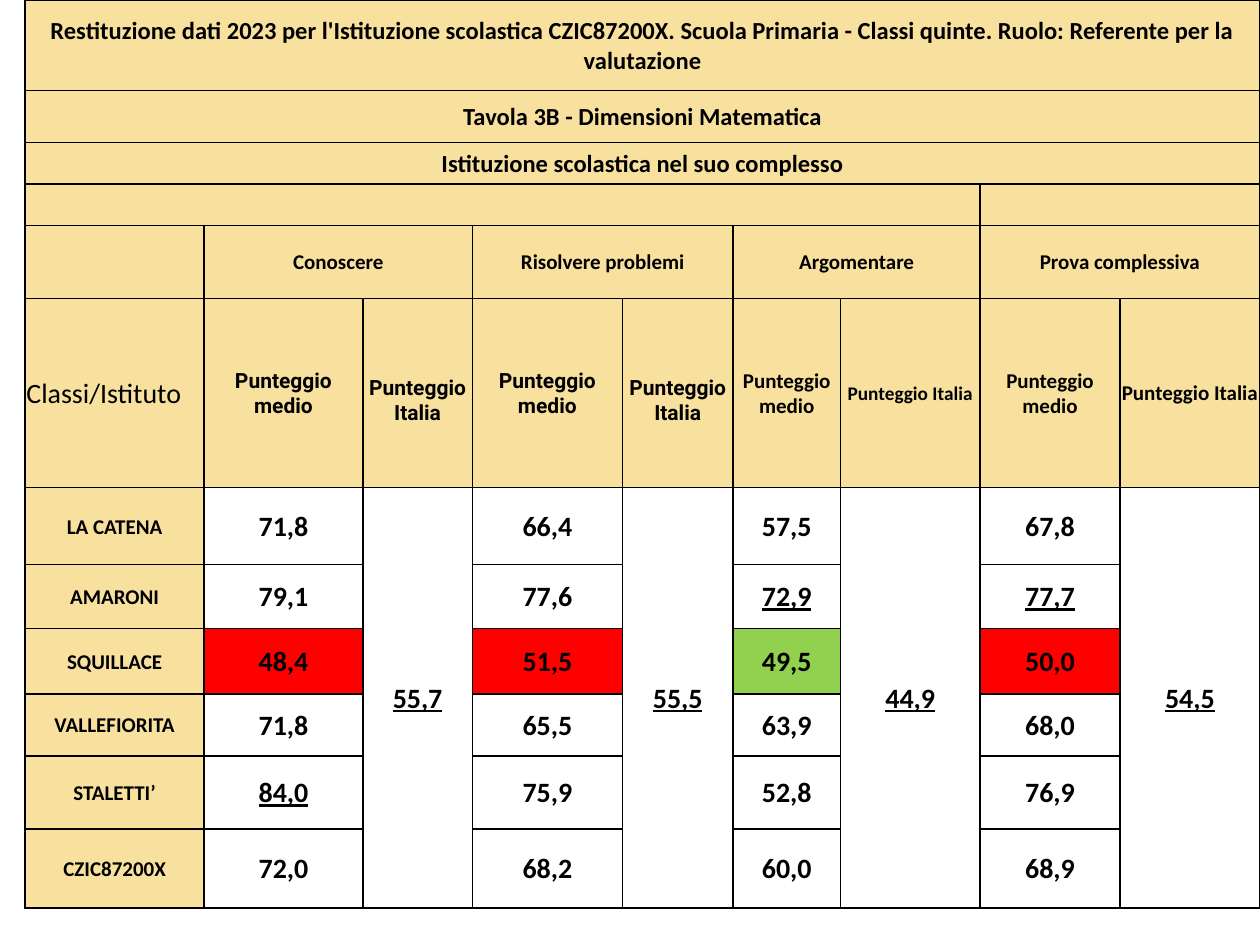
from lxml import etree
from pptx import Presentation
from pptx.dml.color import RGBColor
from pptx.enum import text as t
from pptx.oxml import ns
from pptx.util import Inches, Pt

HUES = {"sand": "F8E19F", "red": "FF0000", "green": "92D050", "ink": "000000"}
WIDTHS = [1.42, 1.26, 0.87, 1.19, 0.88, 0.85, 1.11, 1.11, 1.11]
HEIGHTS = [0.72, 0.41, 0.33, 0.33, 0.58, 1.5, 0.61, 0.51, 0.52, 0.49, 0.58, 0.63]
TITLES = [
    "Restituzione dati 2023 per l'Istituzione scolastica CZIC87200X. "
    "Scuola Primaria - Classi quinte. Ruolo: Referente per la valutazione",
    "Tavola 3B - Dimensioni Matematica",
    "Istituzione scolastica nel suo complesso",
]
GROUPS = ["Conoscere", "Risolvere problemi", "Argomentare", "Prova complessiva"]
SCORES = [
    ("LA CATENA", "71,8", "66,4", "57,5", "67,8"),
    ("AMARONI", "79,1", "77,6", "72,9", "77,7"),
    ("SQUILLACE", "48,4", "51,5", "49,5", "50,0"),
    ("VALLEFIORITA", "71,8", "65,5", "63,9", "68,0"),
    ("STALETTI’", "84,0", "75,9", "52,8", "76,9"),
    ("CZIC87200X", "72,0", "68,2", "60,0", "68,9"),
]
MEANS = ["55,7", "55,5", "44,9", "54,5"]
BEST = {"84,0", "72,9", "77,7"}
MARKS = {"48,4": "red", "51,5": "red", "49,5": "green", "50,0": "red"}
HEAD = 6


def write(cell, words, size=12, font="Calibri", bold=True, line=False,
          align=t.PP_ALIGN.CENTER, space=None, top=0.01, side=0.01):
    cell.margin_left = cell.margin_right = Inches(side)
    cell.margin_top, cell.margin_bottom = Inches(top), 0
    cell.vertical_anchor = t.MSO_ANCHOR.MIDDLE
    cell.text = words
    for para in cell.text_frame.paragraphs:
        para.alignment = align
        para.line_spacing = space
        para.font.size = Pt(size)
        for run in para.runs:
            face = run.font
            face.size, face.name = Pt(size), font
            face.bold, face.underline = bold, line
            face.color.rgb = RGBColor.from_string(HUES["ink"])


def edge(cell):
    props = cell._tc.get_or_add_tcPr()
    for side in ("lnL", "lnR", "lnT", "lnB"):
        line = etree.SubElement(props, ns.qn("a:" + side), w=str(Pt(1)))
        fill = etree.SubElement(line, ns.qn("a:solidFill"))
        etree.SubElement(fill, ns.qn("a:srgbClr"), val=HUES["ink"])


def paint(cell, hue):
    cell.fill.solid()
    cell.fill.fore_color.rgb = RGBColor.from_string(HUES[hue])


def join(grid, row, col, last_row, last_col):
    cell = grid.cell(row, col)
    cell.merge(grid.cell(last_row, last_col))
    return cell


def add_grid(slide, left, top, width, height):
    grid = slide.shapes.add_table(
        len(HEIGHTS), len(WIDTHS), left, top, width, height).table
    grid.first_row = grid.horz_banding = False
    for col, size in zip(grid.columns, WIDTHS):
        col.width = Inches(size)
    for row, size in zip(grid.rows, HEIGHTS):
        row.height = Inches(size)
    for y in range(len(HEIGHTS)):
        for x in range(len(WIDTHS)):
            cell = grid.cell(y, x)
            write(cell, "")
            edge(cell)
            if y < HEAD or x == 0:
                paint(cell, "sand")
            else:
                cell.fill.background()
    return grid


def fill_head(grid):
    for row, words in enumerate(TITLES):
        write(join(grid, row, 0, row, 8), words, size=14)
    join(grid, 3, 0, 3, 6)
    join(grid, 3, 7, 3, 8)
    write(grid.cell(5, 0), "Classi/Istituto", size=16, bold=False,
          align=t.PP_ALIGN.LEFT)
    for n, words in enumerate(GROUPS):
        col = 1 + 2 * n
        write(join(grid, 4, col, 4, col + 1), words)
        if n < 2:
            write(grid.cell(5, col), "Punteggio\nmedio", font="Roboto")
            write(grid.cell(5, col + 1), "Punteggio\nItalia", font="Roboto",
                  top=0.12)
        else:
            write(grid.cell(5, col), "Punteggio medio")
            write(grid.cell(5, col + 1), "Punteggio Italia",
                  size=11 if n == 2 else 12)


def fill_body(grid):
    for row, (name, *marks) in enumerate(SCORES, HEAD):
        write(grid.cell(row, 0), name, space=1.07, top=0, side=0.06)
        for n, mark in enumerate(marks):
            cell = grid.cell(row, 1 + 2 * n)
            write(cell, mark, size=16, line=mark in BEST)
            if mark in MARKS:
                paint(cell, MARKS[mark])
    for n, mean in enumerate(MEANS):
        col = 2 + 2 * n
        write(join(grid, HEAD, col, 11, col), mean, size=16, line=True)


def main():
    deck = Presentation()
    deck.slide_width, deck.slide_height = Inches(10), Inches(7.5)
    slide = deck.slides.add_slide(deck.slide_layouts[6])
    grid = add_grid(slide, Inches(0.2), 0, Inches(9.8), Inches(7.21))
    fill_head(grid)
    fill_body(grid)
    deck.save("out.pptx")


if __name__ == "__main__":
    main()
